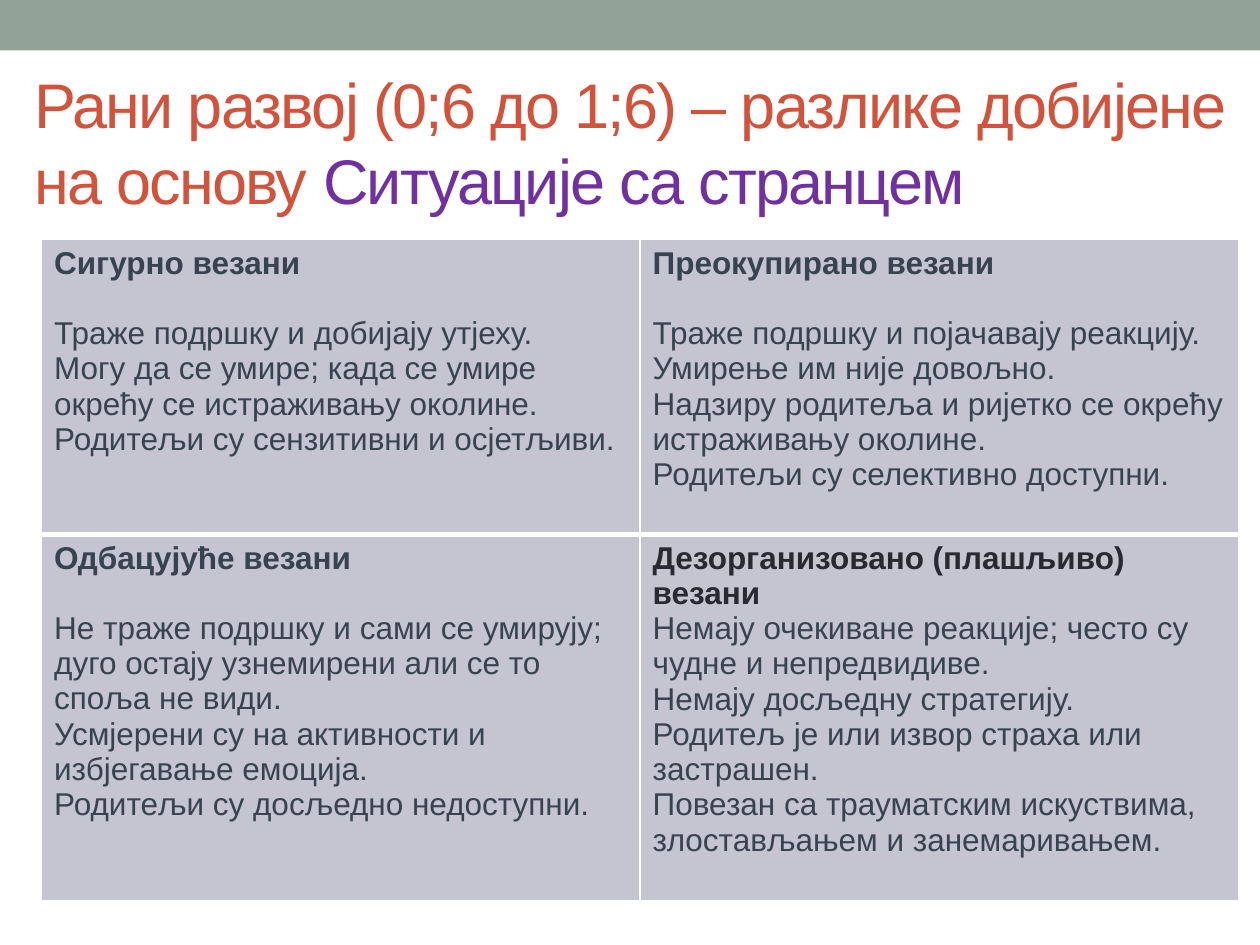
from pptx import Presentation
from pptx.dml.color import RGBColor
from pptx.enum.shapes import MSO_SHAPE as Shape
from pptx.enum.text import MSO_ANCHOR as Anchor, MSO_AUTO_SIZE as Fit, PP_ALIGN as Align
from pptx.oxml import parse_xml
from pptx.oxml.ns import nsdecls
from pptx.util import Inches, Pt

SAGE = RGBColor(0x93, 0xA2, 0x99)
RUST = RGBColor(0xD2, 0x53, 0x3C)
PURPLE = RGBColor(0x70, 0x30, 0xA0)
SLATE = RGBColor(0x39, 0x43, 0x50)
INK = RGBColor(0x29, 0x29, 0x34)
LILAC = RGBColor(0xC5, 0xC5, 0xD1)
WHITE = RGBColor(0xFF, 0xFF, 0xFF)

WIDTH, HEIGHT = Inches(10), Inches(7.5)
TITLE = [
    ("Рани развој (0;6 до 1;6) – разлике добијене на основу ", RUST),
    ("Ситуације са странцем", PURPLE),
]
STYLES = [
    [
        ("Сигурно везани", SLATE, 20, [
            "Траже подршку и добијају утјеху.",
            "Могу да се умире; када се умире окрећу се истраживању околине.",
            "Родитељи су сензитивни и осјетљиви.",
        ]),
        ("Преокупирано везани", SLATE, 20, [
            "Траже подршку и појачавају реакцију. Умирење им није довољно.",
            "Надзиру родитеља и ријетко се окрећу истраживању околине.",
            "Родитељи су селективно доступни.",
        ]),
    ],
    [
        ("Одбацујуће везани", SLATE, 20, [
            "Не траже подршку и сами се умирују; дуго остају узнемирени "
            "али се то споља не види.",
            "Усмјерени су на активности и избјегавање емоција.",
            "Родитељи су досљедно недоступни.",
        ]),
        ("Дезорганизовано (плашљиво) везани", INK, 0, [
            "Немају очекиване реакције; често су чудне и непредвидиве.",
            "Немају досљедну стратегију.",
            "Родитељ је или извор страха или застрашен.",
            "Повезан са трауматским искуствима, злостављањем и занемаривањем.",
        ]),
    ],
]


def add_run(para, text, size, color, bold=False):
    """Append one styled run to a paragraph and return it."""
    run = para.add_run()
    run.text = text
    font = run.font
    font.name, font.size, font.bold = "Arial", Pt(size), bold
    font.color.rgb = color
    return run


def add_band(slide):
    """Draw the plain band across the top of the slide."""
    band = slide.shapes.add_shape(Shape.RECTANGLE, 0, 0, WIDTH, Inches(0.4))
    band.shadow.inherit = False
    band.fill.solid()
    band.fill.fore_color.rgb = SAGE
    band.line.fill.background()


def set_title(slide):
    """Place the title and write its two coloured runs."""
    title = slide.shapes.title
    title.left, title.top = Inches(0.17), Inches(0.58)
    title.width, title.height = Inches(9.67), Inches(1.08)
    frame = title.text_frame
    frame.word_wrap, frame.auto_size = True, Fit.NONE
    frame.vertical_anchor = Anchor.MIDDLE
    para = frame.paragraphs[0]
    para.alignment = Align.LEFT
    for text, color in TITLE:
        run = add_run(para, text, 36, color)
        run.font._element.set("spc", "-100")


def set_edges(cell, top, bottom):
    """Give a cell white borders, with top and bottom widths in points."""
    props = cell._tc.get_or_add_tcPr()
    edges = [("L", 1), ("R", 1), ("T", top), ("B", bottom)]
    for i, (side, width) in enumerate(edges):
        props.insert(i, parse_xml(
            f'<a:ln{side} {nsdecls("a")} w="{Pt(width)}"><a:solidFill>'
            f'<a:srgbClr val="{WHITE}"/></a:solidFill></a:ln{side}>'))


def fill_cell(cell, head, color, gap, lines):
    """Write a bold heading and its lines, parted by a gap in points."""
    cell.fill.solid()
    cell.fill.fore_color.rgb = LILAC
    frame = cell.text_frame
    add_run(frame.paragraphs[0], head, 18, color, True)
    for i, line in enumerate(lines):
        para = frame.add_paragraph()
        para.space_before = Pt(0 if i else gap)
        add_run(para, line, 18, SLATE)


def add_grid(slide):
    """Add the table of attachment styles."""
    grid = slide.shapes.add_table(
        2, 2, Inches(0.33), Inches(1.9), Inches(9.5), Inches(5.25)).table
    for r, (row, high) in enumerate(zip(STYLES, (2.34, 2.91))):
        grid.rows[r].height = Inches(high)
        for c, style in enumerate(row):
            cell = grid.cell(r, c)
            fill_cell(cell, *style)
            set_edges(cell, *((3, 1) if r else (1, 3)))


def main():
    """Build the slide and save it."""
    deck = Presentation()
    deck.slide_width, deck.slide_height = WIDTH, HEIGHT
    slide = deck.slides.add_slide(deck.slide_layouts[5])
    add_band(slide)
    set_title(slide)
    add_grid(slide)
    deck.save("out.pptx")


if __name__ == "__main__":
    main()
